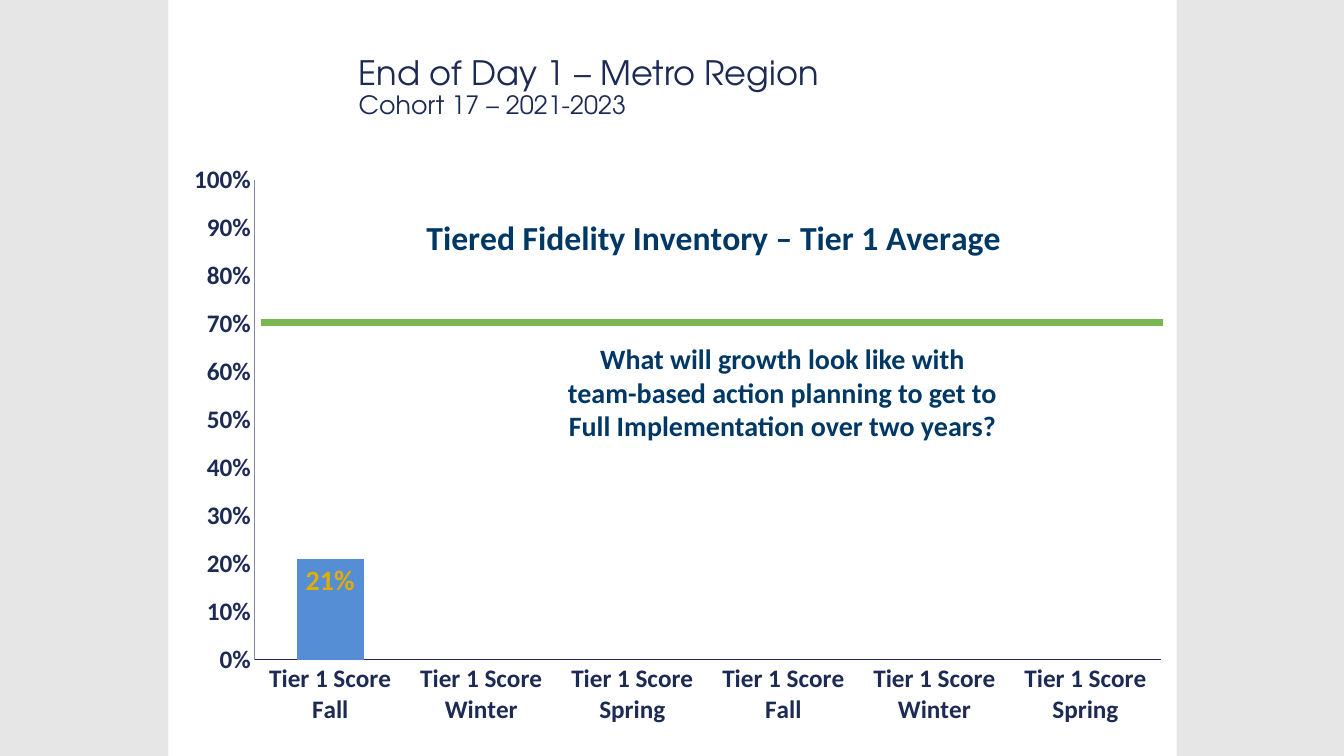
from itertools import cycle

from lxml.etree import SubElement
from pptx import Presentation
from pptx.chart.data import CategoryChartData
from pptx.dml.color import RGBColor
from pptx.enum.chart import XL_CHART_TYPE, XL_LABEL_POSITION, XL_TICK_MARK
from pptx.enum.shapes import MSO_CONNECTOR, MSO_SHAPE
from pptx.enum.text import MSO_ANCHOR, PP_ALIGN
from pptx.oxml.ns import qn
from pptx.util import Inches, Pt

COLORS = {
    "backdrop": "E7E6E6", "page": "FFFFFF", "ink": "1D2A53", "navy": "003865",
    "axis": "7E87A6", "goal": "7AB752", "gold": "E2AC00", "chart": "3A54A5",
    "series": "8EB4E3", "fall": "558ED5", "winter": "2962A7", "spring": "003865",
}
HEADING = "TeX Gyre Adventor"
BODY = "Calibri"
SEASONS = ["Fall", "Winter", "Spring"]


def rgb(name):
    return RGBColor.from_string(COLORS[name])


class SlideBuilder:
    def __init__(self, slide):
        self.slide = slide
        fill = slide.background.fill
        fill.solid()
        fill.fore_color.rgb = rgb("backdrop")

    def style(self, font, color, **values):
        for key, value in values.items():
            setattr(font, key, value)
        font.color.rgb = rgb(color)

    def frame(self, sp, **values):
        for key, value in values.items():
            setattr(sp.text_frame, key, value)
        return sp.text_frame

    def rect(self, x, y, w, h):
        sp = self.slide.shapes.add_shape(
            MSO_SHAPE.RECTANGLE, Inches(x), Inches(y), Inches(w), Inches(h))
        sp.shadow.inherit = False
        sp.fill.solid()
        sp.fill.fore_color.rgb = rgb("page")
        sp.line.fill.background()
        return sp

    def heading(self, x, y, w, h, lines):
        sp = self.slide.shapes.add_textbox(
            Inches(x), Inches(y), Inches(w), Inches(h))
        tf = self.frame(sp, word_wrap=True, vertical_anchor=MSO_ANCHOR.MIDDLE)
        p = tf.paragraphs[0]
        p.line_spacing = 0.9
        for i, (text, size) in enumerate(lines):
            if i:
                p.add_line_break()
            r = p.add_run()
            r.text = text
            self.style(r.font, "ink", name=HEADING, size=Pt(size))

    def note(self, x, y, w, h, lines):
        tf = self.frame(self.rect(x, y, w, h), word_wrap=True,
                        vertical_anchor=MSO_ANCHOR.TOP, margin_top=Inches(0.81))
        for i, text in enumerate(lines):
            p = tf.add_paragraph() if i else tf.paragraphs[0]
            p.alignment = PP_ALIGN.CENTER
            r = p.add_run()
            r.text = text
            self.style(r.font, "navy", name=BODY, size=Pt(20), bold=True)

    def line(self, x1, y1, x2, y2, color, width):
        cx = self.slide.shapes.add_connector(
            MSO_CONNECTOR.STRAIGHT, Inches(x1), Inches(y1), Inches(x2), Inches(y2))
        cx.line.color.rgb = rgb(color)
        cx.line.width = Pt(width)
        SubElement(cx.element.spPr, qn("a:effectLst"))

    def layout(self, parent, index, **values):
        for old in parent.findall(qn("c:layout")):
            parent.remove(old)
        layout = SubElement(parent, qn("c:layout"))
        manual = SubElement(layout, qn("c:manualLayout"))
        for key, value in values.items():
            SubElement(manual, qn(f"c:{key}")).set("val", str(value))
        parent.insert(index, layout)

    def axis(self, axis, line_color):
        for key, value in {
            "has_major_gridlines": False,
            "major_tick_mark": XL_TICK_MARK.NONE,
            "minor_tick_mark": XL_TICK_MARK.NONE,
        }.items():
            setattr(axis, key, value)
        axis.format.line.color.rgb = rgb(line_color)
        axis.format.line.width = Pt(0.75)
        self.style(axis.tick_labels.font, "ink", name=BODY, size=Pt(18), bold=True)

    def chart(self, x, y, w, h, title, categories, values):
        data = CategoryChartData(number_format="0%")
        data.categories = categories
        data.add_series("Series 1", values)
        chart = self.slide.shapes.add_chart(
            XL_CHART_TYPE.COLUMN_CLUSTERED, Inches(x), Inches(y),
            Inches(w), Inches(h), data).chart
        chart.has_legend = False
        self.style(chart.font, "chart", name=BODY, size=Pt(10))

        r = chart.chart_title.text_frame.paragraphs[0].add_run()
        r.text = title
        self.style(r.font, "navy", name=BODY, size=Pt(24), bold=True)
        heading = chart.element.xpath("c:chart/c:title")[0]
        self.layout(heading, 1, xMode="edge", yMode="edge", x=0.24, y=0.08)
        for overlay in heading.findall(qn("c:overlay")):
            overlay.set("val", "1")
        area = chart.element.xpath("c:chart/c:plotArea")[0]
        self.layout(area, 0, layoutTarget="inner", xMode="edge", yMode="edge",
                    x=0.07, y=0.03, w=0.93, h=0.83)

        self.axis(chart.category_axis, "ink")
        self.axis(chart.value_axis, "axis")
        for key, value in {"minimum_scale": 0, "maximum_scale": 1,
                           "major_unit": 0.1}.items():
            setattr(chart.value_axis, key, value)
        chart.value_axis.tick_labels.number_format = "0%"
        chart.value_axis.tick_labels.number_format_is_linked = False

        plot = chart.plots[0]
        for key, value in {"gap_width": 125, "overlap": -100,
                           "vary_by_categories": False}.items():
            setattr(plot, key, value)
        series = plot.series[0]
        series.format.fill.solid()
        series.format.fill.fore_color.rgb = rgb("series")
        for i, season in zip(range(len(values)), cycle(SEASONS)):
            fill = series.points[i].format.fill
            fill.solid()
            fill.fore_color.rgb = rgb(season.lower())
        labels = series.data_labels
        for key, value in {"show_value": True, "number_format": "0%",
                           "number_format_is_linked": False,
                           "position": XL_LABEL_POSITION.INSIDE_END}.items():
            setattr(labels, key, value)
        self.style(labels.font, "gold", name=BODY, size=Pt(20), bold=True)


def main():
    prs = Presentation()
    prs.slide_width, prs.slide_height = Inches(13.33), Inches(7.5)
    s = SlideBuilder(prs.slides.add_slide(prs.slide_layouts[6]))
    s.rect(1.67, 0, 10, 7.5)
    s.heading(3.46, 0.38, 7.64, 1, [
        ("End of Day 1 – Metro Region", 24), ("Cohort 17 – 2021-2023", 18)])
    s.chart(1.85, 1.61, 9.67, 5.74, "Tiered Fidelity Inventory – Tier 1 Average",
            [f"Tier 1 Score\n{season}" for season in SEASONS * 2],
            [0.21] + [None] * 5)
    s.note(4.22, 2.58, 7.08, 3.94, [
        "What will growth look like with",
        "team-based action planning to get to",
        "Full Implementation over two years?"])
    s.line(2.59, 3.2, 11.53, 3.2, "goal", 4.5)
    prs.save("out.pptx")


if __name__ == "__main__":
    main()
